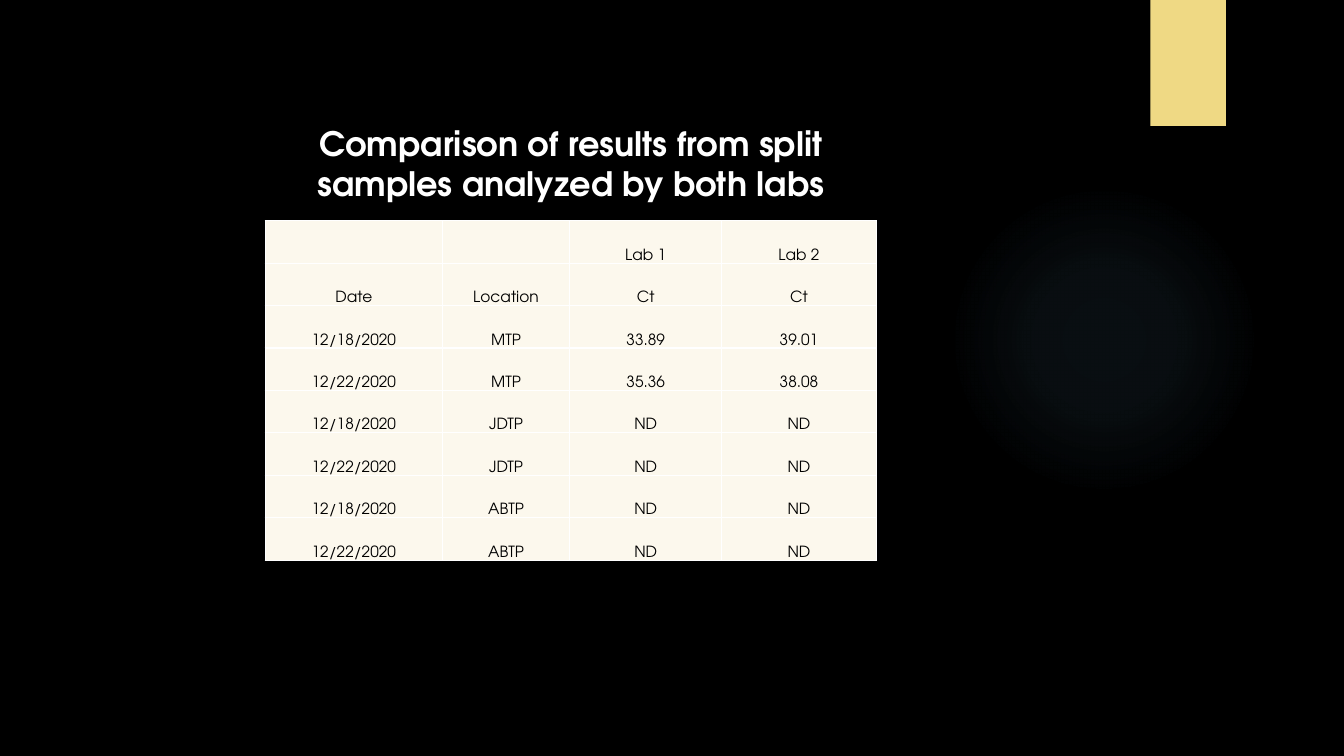
import pptx
import pptx.dml.color
import pptx.enum.shapes
import pptx.enum.text
import pptx.oxml
import pptx.oxml.ns
import pptx.util

RGBColor = pptx.dml.color.RGBColor
Inches = pptx.util.Inches

BLACK = RGBColor(0x00, 0x00, 0x00)
WHITE = RGBColor(0xFF, 0xFF, 0xFF)
GOLD = RGBColor(0xEF, 0xD9, 0x84)
CREAM = RGBColor(0xFC, 0xF8, 0xED)
SKY = RGBColor(0x7A, 0xC4, 0xF0)

FONT = "TeX Gyre Adventor"
NAMESPACE = pptx.oxml.ns.nsdecls("a")
COLUMN_WIDTHS = (1.76, 1.26, 1.51, 1.53)
GLOW_STOPS = ((0, 7), (36, 6), (69, 0))  # position and opacity, in percent

RESULTS = (
    ("", "", "Lab 1", "Lab 2"),
    ("Date", "Location", "Ct", "Ct"),
    ("12/18/2020", "MTP", "33.89", "39.01"),
    ("12/22/2020", "MTP", "35.36", "38.08"),
    ("12/18/2020", "JDTP", "ND", "ND"),
    ("12/22/2020", "JDTP", "ND", "ND"),
    ("12/18/2020", "ABTP", "ND", "ND"),
    ("12/22/2020", "ABTP", "ND", "ND"),
)


def set_paragraph(paragraph, size, color, bold=False):
    paragraph.alignment = pptx.enum.text.PP_ALIGN.CENTER
    paragraph.font.name = FONT
    paragraph.font.size = pptx.util.Pt(size)
    paragraph.font.bold = bold
    paragraph.font.color.rgb = color


def add_plain_shape(slide, kind, box, color):
    shape = slide.shapes.add_shape(kind, *map(Inches, box))
    shape.shadow.inherit = False
    shape.fill.solid()
    shape.fill.fore_color.rgb = color
    shape.line.fill.background()
    return shape


def add_glow(slide, box):
    glow = add_plain_shape(slide, pptx.enum.shapes.MSO_SHAPE.OVAL, box, SKY)
    stops = "".join(
        f'<a:gs pos="{position * 1000}"><a:srgbClr val="{SKY}">'
        f'<a:alpha val="{opacity * 1000}"/></a:srgbClr></a:gs>'
        for position, opacity in GLOW_STOPS
    )
    gradient = pptx.oxml.parse_xml(
        f'<a:gradFill {NAMESPACE} rotWithShape="1"><a:gsLst>{stops}</a:gsLst>'
        '<a:path path="circle"><a:fillToRect l="50000" t="50000" r="50000" b="50000"/>'
        "</a:path></a:gradFill>"
    )
    properties = glow.element.spPr
    properties.replace(properties.find(pptx.oxml.ns.qn("a:solidFill")), gradient)


def add_title(slide, box, text):
    frame = slide.shapes.add_textbox(*map(Inches, box)).text_frame
    frame.word_wrap = True
    frame.text = text
    set_paragraph(frame.paragraphs[0], 24, WHITE, bold=True)


def add_borders(cell):
    properties = cell._tc.get_or_add_tcPr()
    for index, side in enumerate(("lnL", "lnR", "lnT", "lnB")):
        properties.insert(index, pptx.oxml.parse_xml(
            f'<a:{side} {NAMESPACE} w="12700"><a:solidFill>'
            f'<a:srgbClr val="{WHITE}"/></a:solidFill></a:{side}>'
        ))


def add_results_table(slide, box):
    table = slide.shapes.add_table(
        len(RESULTS), len(COLUMN_WIDTHS), *map(Inches, box)
    ).table
    table.first_row = False
    table.horz_banding = False
    for column, width in zip(table.columns, COLUMN_WIDTHS):
        column.width = Inches(width)
    for row_index, values in enumerate(RESULTS):
        for column_index, value in enumerate(values):
            cell = table.cell(row_index, column_index)
            cell.text = value
            cell.vertical_anchor = pptx.enum.text.MSO_ANCHOR.BOTTOM
            cell.margin_left = cell.margin_right = cell.margin_top = Inches(0.01)
            cell.margin_bottom = 0
            cell.fill.solid()
            cell.fill.fore_color.rgb = CREAM
            add_borders(cell)
            set_paragraph(cell.text_frame.paragraphs[0], 11, BLACK)


def main():
    presentation = pptx.Presentation()
    presentation.slide_width = Inches(13.33)
    presentation.slide_height = Inches(7.5)
    slide = presentation.slides.add_slide(presentation.slide_layouts[6])
    slide.background.fill.solid()
    slide.background.fill.fore_color.rgb = BLACK

    # Backdrop: soft glow and gold tab
    add_glow(slide, (9.41, 1.83, 3.08, 3.08))
    add_plain_shape(
        slide, pptx.enum.shapes.MSO_SHAPE.RECTANGLE, (11.41, 0, 0.75, 1.25), GOLD
    )

    # Results under their title
    add_results_table(slide, (2.63, 2.19, sum(COLUMN_WIDTHS), 3.37))
    add_title(
        slide,
        (2.82, 1.17, 5.68, 0.91),
        "Comparison of results from split samples analyzed by both labs",
    )
    presentation.save("out.pptx")


if __name__ == "__main__":
    main()
